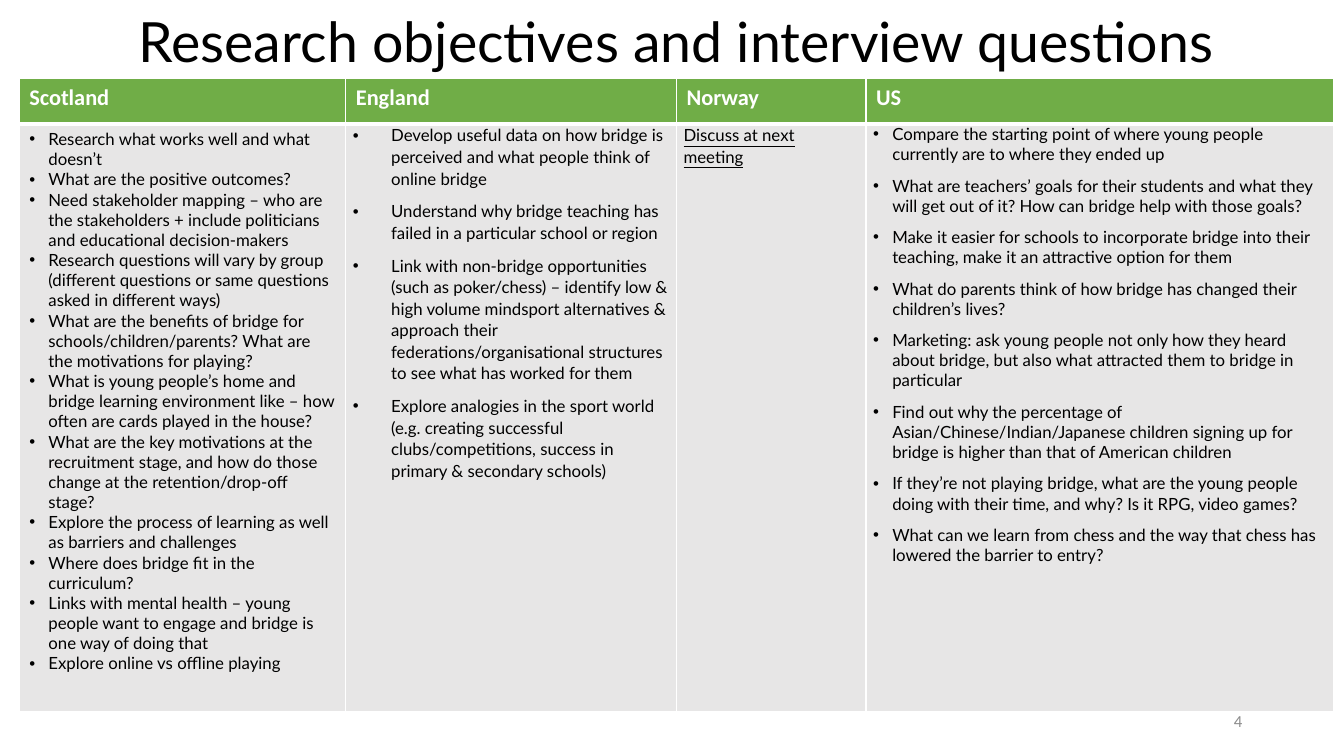
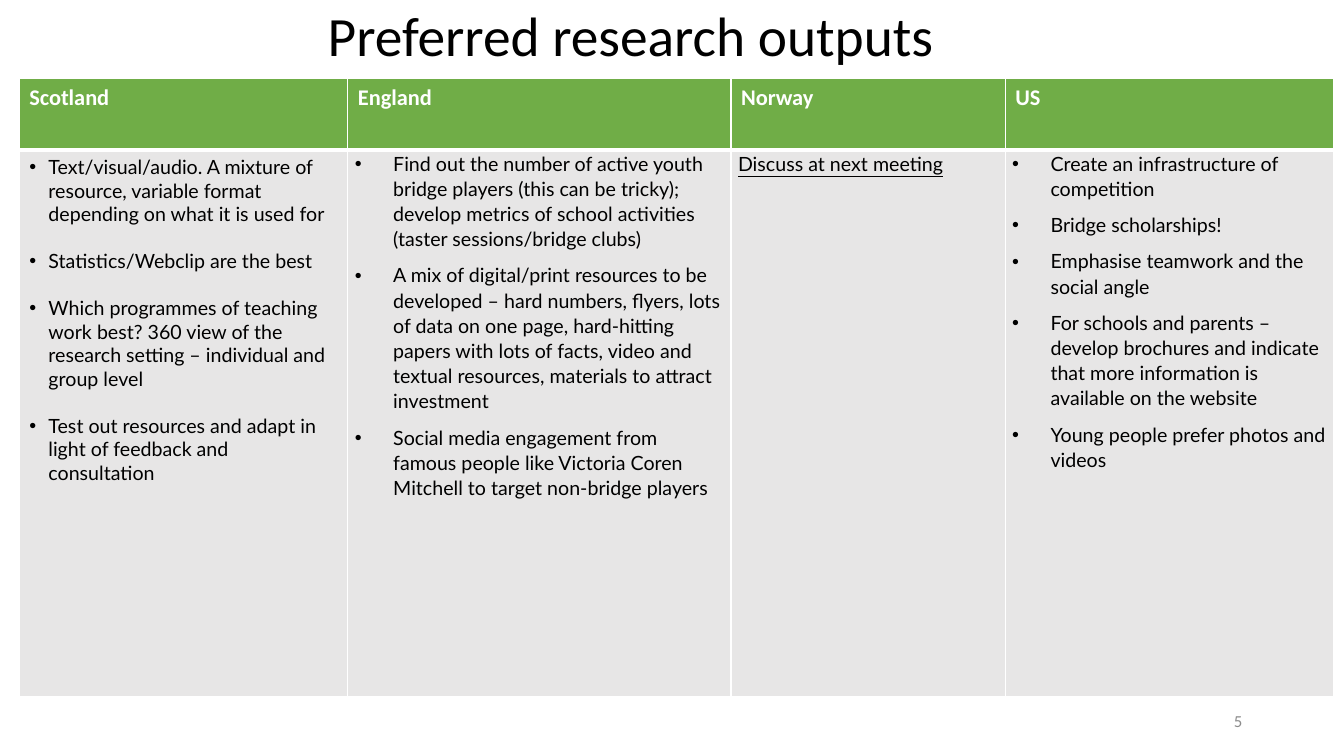
from dataclasses import dataclass

from lxml.etree import SubElement
from pptx import Presentation
from pptx.dml.color import RGBColor
from pptx.enum.text import MSO_ANCHOR, MSO_AUTO_SIZE, PP_ALIGN
from pptx.oxml.ns import qn
from pptx.util import Inches, Pt


@dataclass(frozen=True)
class Theme:
    green: str = "70AD47"
    pale: str = "E7E6E6"
    white: str = "FFFFFF"
    black: str = "000000"
    grey: str = "8C8C8C"
    heading_font: str = "Calibri"
    body_font: str = "Lato"
    title_size: float = 39.6
    header_size: float = 16
    number_size: float = 12
    thin_line: float = 1
    thick_line: float = 3


THEME = Theme()


@dataclass(frozen=True)
class Column:
    """One country: its heading, its points and how they are set."""
    heading: str
    points: tuple
    indent: float = 0.38
    line_spacing: float = 1.07
    space_after: float = 8
    tight: bool = True
    underline: bool = False


def write_text(paragraph, text, font=THEME.body_font, size=12, color=THEME.black,
               bold=False, underline=False, align=PP_ALIGN.LEFT,
               line_spacing=1.0, space_after=0, indent=0):
    """Fill one paragraph; an indent makes it a hanging bullet."""
    paragraph.alignment = align
    paragraph.line_spacing = line_spacing
    paragraph.space_before = Pt(0)
    paragraph.space_after = Pt(space_after)
    if indent:
        properties = paragraph._p.get_or_add_pPr()
        properties.set("marL", str(Inches(indent)))
        properties.set("indent", str(-Inches(indent)))
        SubElement(properties, qn("a:buFont"), typeface="Arial")
        SubElement(properties, qn("a:buChar"), char="•")
    run = paragraph.add_run()
    run.text = text
    run.font.name = font
    run.font.size = Pt(size)
    run.font.bold = bold
    run.font.underline = underline
    run.font.color.rgb = RGBColor.from_string(color)


def set_borders(cell, **widths):
    """Draw white borders, given as L, R, T and B widths in points."""
    properties = cell._tc.get_or_add_tcPr()
    for position, side in enumerate("LRTB"):
        width = widths.get(side, THEME.thin_line)
        line = SubElement(properties, qn(f"a:ln{side}"), w=str(Pt(width)))
        fill = SubElement(line, qn("a:solidFill"))
        SubElement(fill, qn("a:srgbClr"), val=THEME.white)
        properties.insert(position, line)


class Deck:
    def __init__(self, theme):
        self.theme = theme
        self.presentation = Presentation()
        self.presentation.slide_width = Inches(13.33)
        self.presentation.slide_height = Inches(7.5)
        self.slide = None

    def add_slide(self):
        layout = self.presentation.slide_layouts.get_by_name("Title Only")
        self.slide = self.presentation.slides.add_slide(layout)

    def add_title(self, text, left, width, **text_format):
        title = self.slide.shapes.title
        title.left, title.top = Inches(left), Inches(-0.02)
        title.width, title.height = Inches(width), Inches(0.8)
        frame = title.text_frame
        frame.auto_size = MSO_AUTO_SIZE.NONE
        frame.vertical_anchor = MSO_ANCHOR.MIDDLE
        write_text(frame.paragraphs[0], text, size=self.theme.title_size, **text_format)

    def add_country_table(self, columns, widths, heights, size):
        frame = self.slide.shapes.add_table(
            2, len(columns), Inches(0.19), Inches(0.78),
            Inches(sum(widths)), Inches(sum(heights)))
        table = frame.table
        table.horz_banding = False
        for row, height in zip(table.rows, heights):
            row.height = Inches(height)
        for index, (column, width) in enumerate(zip(columns, widths)):
            table.columns[index].width = Inches(width)
            self.fill_header(table.cell(0, index), column)
            self.fill_points(table.cell(1, index), column, size)

    def fill_cell(self, cell, color):
        cell.fill.solid()
        cell.fill.fore_color.rgb = RGBColor.from_string(color)

    def fill_header(self, cell, column):
        self.fill_cell(cell, self.theme.green)
        set_borders(cell, B=self.theme.thick_line)
        write_text(cell.text_frame.paragraphs[0], column.heading,
                   font=self.theme.heading_font, size=self.theme.header_size,
                   color=self.theme.white, bold=True)

    def fill_points(self, cell, column, size):
        self.fill_cell(cell, self.theme.pale)
        set_borders(cell, T=self.theme.thick_line)
        if column.tight:
            cell.margin_left = cell.margin_right = Inches(0.07)
            cell.margin_top = cell.margin_bottom = Inches(0)
        frame = cell.text_frame
        for index, point in enumerate(column.points):
            paragraph = frame.add_paragraph() if index else frame.paragraphs[0]
            write_text(paragraph, point, size=size, underline=column.underline,
                       indent=column.indent, line_spacing=column.line_spacing,
                       space_after=column.space_after)

    def add_number(self, number):
        box = self.slide.shapes.add_textbox(
            Inches(9.42), Inches(6.95), Inches(3), Inches(0.4))
        frame = box.text_frame
        frame.word_wrap = True
        frame.vertical_anchor = MSO_ANCHOR.MIDDLE
        write_text(frame.paragraphs[0], str(number), font=self.theme.heading_font,
                   size=self.theme.number_size, color=self.theme.grey,
                   align=PP_ALIGN.RIGHT)


def scotland(points, space_after):
    return Column("Scotland", points, indent=0.19, line_spacing=1.0,
                  space_after=space_after, tight=False)


NORWAY = Column("Norway", ("Discuss at next meeting",), indent=0, underline=True)

# Research objectives
OBJECTIVES = (
    scotland((
        "Research what works well and what doesn’t",
        "What are the positive outcomes?",
        "Need stakeholder mapping – who are the stakeholders + include politicians "
        "and educational decision-makers",
        "Research questions will vary by group (different questions or same "
        "questions asked in different ways)",
        "What are the benefits of bridge for schools/children/parents? What are "
        "the motivations for playing?",
        "What is young people’s home and bridge learning environment like – how "
        "often are cards played in the house?",
        "What are the key motivations at the recruitment stage, and how do those "
        "change at the retention/drop-off stage?",
        "Explore the process of learning as well as barriers and challenges",
        "Where does bridge fit in the curriculum?",
        "Links with mental health – young people want to engage and bridge is one "
        "way of doing that",
        "Explore online vs offline playing",
    ), space_after=0),
    Column("England", (
        "Develop useful data on how bridge is perceived and what people think of "
        "online bridge",
        "Understand why bridge teaching has failed in a particular school or region",
        "Link with non-bridge opportunities (such as poker/chess) – identify low & "
        "high volume mindsport alternatives & approach their "
        "federations/organisational structures to see what has worked for them",
        "Explore analogies in the sport world (e.g. creating successful "
        "clubs/competitions, success in primary & secondary schools)",
    )),
    NORWAY,
    Column("US", (
        "Compare the starting point of where young people currently are to where "
        "they ended up",
        "What are teachers’ goals for their students and what they will get out of "
        "it? How can bridge help with those goals?",
        "Make it easier for schools to incorporate bridge into their teaching, make "
        "it an attractive option for them",
        "What do parents think of how bridge has changed their children’s lives?",
        "Marketing: ask young people not only how they heard about bridge, but also "
        "what attracted them to bridge in particular",
        "Find out why the percentage of Asian/Chinese/Indian/Japanese children "
        "signing up for bridge is higher than that of American children",
        "If they’re not playing bridge, what are the young people doing with their "
        "time, and why? Is it RPG, video games?",
        "What can we learn from chess and the way that chess has lowered the "
        "barrier to entry?",
    ), indent=0.19, line_spacing=1.0),
)

# Research outputs
OUTPUTS = (
    scotland((
        "Text/visual/audio. A mixture of resource, variable format depending on "
        "what it is used for",
        "Statistics/Webclip are the best",
        "Which programmes of teaching work best? 360 view of the research setting – "
        "individual and group level",
        "Test out resources and adapt in light of feedback and consultation",
    ), space_after=16.8),
    Column("England", (
        "Find out the number of active youth bridge players (this can be tricky); "
        "develop metrics of school activities (taster sessions/bridge clubs)",
        "A mix of digital/print resources to be developed – hard numbers, flyers, "
        "lots of data on one page, hard-hitting papers with lots of facts, video "
        "and textual resources, materials to attract investment",
        "Social media engagement from famous people like Victoria Coren Mitchell to "
        "target non-bridge players",
    )),
    NORWAY,
    Column("US", (
        "Create an infrastructure of competition",
        "Bridge scholarships!",
        "Emphasise teamwork and the social angle",
        "For schools and parents – develop brochures and indicate that more "
        "information is available on the website",
        "Young people prefer photos and videos",
    )),
)


def main():
    deck = Deck(THEME)

    # Objectives slide
    deck.add_slide()
    deck.add_title("Research objectives and interview questions", 0.27, 12.87,
                   align=PP_ALIGN.CENTER, line_spacing=1.07, space_after=8)
    deck.add_country_table(OBJECTIVES, (3.24, 3.28, 1.88, 4.64), (0.45, 5.83), size=12)
    deck.add_number(4)

    # Outputs slide
    deck.add_slide()
    deck.add_title("Preferred research outputs", 3.15, 6.59,
                   font=THEME.heading_font, line_spacing=0.9)
    deck.add_country_table(OUTPUTS, (3.26, 3.8, 2.72, 3.26), (0.71, 5.42), size=14)
    deck.add_number(5)

    deck.presentation.save("out.pptx")


if __name__ == "__main__":
    main()
